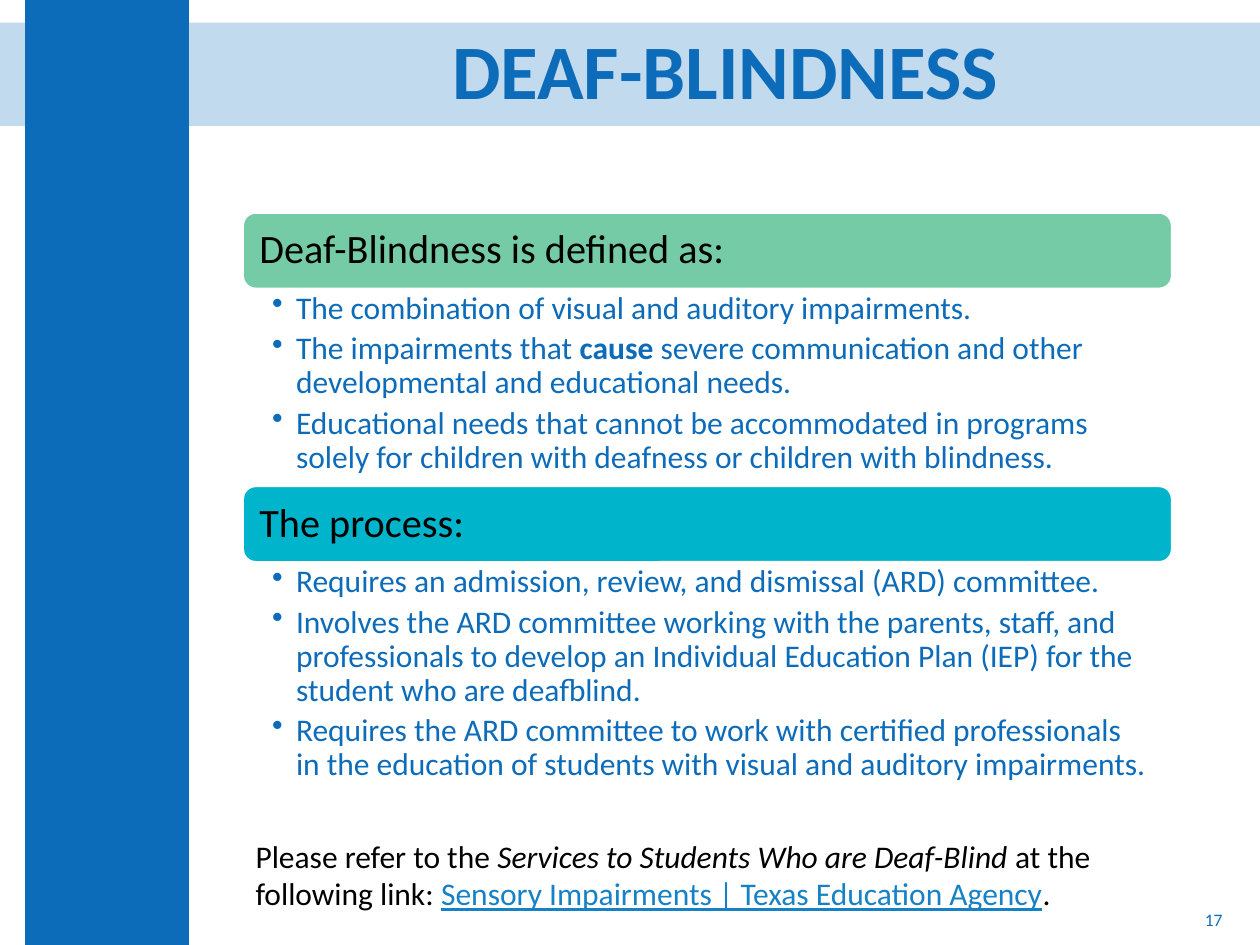
from lxml import etree
from pptx import Presentation
from pptx.dml.color import RGBColor
from pptx.enum.shapes import MSO_SHAPE as SHAPE
from pptx.enum.text import MSO_ANCHOR as ANCHOR, PP_ALIGN as ALIGN
from pptx.oxml.ns import qn
from pptx.util import Inches, Pt

BLUE, BLACK, WHITE = "0D6CB9", "000000", "FFFFFF"


def rgb(value):
    return RGBColor.from_string(value)


def add_text(s, box, paragraphs, size, color, anchor=ANCHOR.TOP,
             insets=(0.1, 0.05, 0.1, 0.05), bullet=False, **para_format):
    """Each paragraph is a list of (text, font values) runs."""
    tf = s.shapes.add_textbox(*map(Inches, box)).text_frame
    tf.word_wrap = True
    tf.vertical_anchor = anchor
    for side, inset in zip(("left", "top", "right", "bottom"), insets):
        setattr(tf, f"margin_{side}", Inches(inset))
    for i, runs in enumerate(paragraphs):
        p = tf.paragraphs[0] if i == 0 else tf.add_paragraph()
        for name, value in para_format.items():
            setattr(p, name, value)
        if bullet:
            pPr = p._p.get_or_add_pPr()
            pPr.set("marL", str(Inches(0.19)))
            pPr.set("indent", str(-Inches(0.19)))
            etree.SubElement(pPr, qn("a:buChar")).set("char", "•")
        for text, values in runs:
            r = p.add_run()
            r.text = text
            font = {"name": "Calibri", "size": Pt(size), "color": color, **values}
            r.font.color.rgb = rgb(font.pop("color"))
            for name, value in font.items():
                setattr(r.font, name, value)


prs = Presentation()
prs.slide_width, prs.slide_height = Inches(10), Inches(7.5)
s = prs.slides.add_slide(prs.slide_layouts[6])

# Pale header band and solid side band
for box, alpha in (((0, 0.18, 10, 0.82), 25), ((0.2, 0, 1.3, 7.5), 100)):
    sp = s.shapes.add_shape(SHAPE.RECTANGLE, *map(Inches, box))
    sp.shadow.inherit = False
    sp.fill.solid()
    sp.fill.fore_color.rgb = rgb(BLUE)
    sp.line.fill.background()
    if alpha < 100:
        clr = sp._element.spPr.find(qn("a:solidFill"))[0]
        etree.SubElement(clr, qn("a:alpha")).set("val", str(alpha * 1000))

# Title and slide number
add_text(s, (1.81, 0.18, 7.9, 0.82), [[("DEAF-BLINDNESS", {"bold": True})]],
         44, BLUE, ANCHOR.MIDDLE, alignment=ALIGN.CENTER, line_spacing=0.9)
add_text(s, (7.55, 7.1, 2.25, 0.4), [[("17", {})]], 10, BLUE, ANCHOR.MIDDLE,
         alignment=ALIGN.RIGHT, space_after=Pt(6))

# Sections: heading bar with a bullet list below
sections = [
    (1.69, 1.56, "75CBA6", "Deaf-Blindness is defined as:", [
        [("The combination of visual and auditory impairments.", {})],
        [("The impairments that ", {}), ("cause ", {"bold": True}),
         ("severe communication and other developmental and educational needs.", {})],
        [("Educational needs that cannot be accommodated in programs solely for "
          "children with deafness or children with blindness.", {})],
    ]),
    (3.86, 1.87, "00B5CB", "The process:", [
        [("Requires an admission, review, and dismissal (ARD) committee.", {})],
        [("Involves the ARD committee working with the parents, staff, and "
          "professionals to develop an Individual Education Plan (IEP) for the "
          "student who are deafblind.", {})],
        [("Requires the ARD committee to work with certified professionals in the "
          "education of students with visual and auditory impairments.", {})],
    ]),
]
left, width, bar_height, pad = 1.93, 7.37, 0.6, 0.03
for top, list_height, color, heading, bullets in sections:
    sp = s.shapes.add_shape(SHAPE.ROUNDED_RECTANGLE, Inches(left), Inches(top),
                            Inches(width), Inches(bar_height))
    sp.shadow.inherit = False
    sp.fill.solid()
    sp.fill.fore_color.rgb = rgb(color)
    sp.line.color.rgb = rgb(WHITE)
    sp.line.width = Pt(1)
    add_text(s, (left + pad, top + pad, width - 2 * pad, bar_height - 2 * pad),
             [[(heading, {})]], 23, BLACK, ANCHOR.MIDDLE, (0.1,) * 4, line_spacing=0.9)
    add_text(s, (left, top + bar_height, width, list_height), bullets, 18, BLUE,
             insets=(0.23, 0.03, 0.18, 0.03), bullet=True,
             line_spacing=0.9, space_after=Pt(3.6))

# Reference note
add_text(s, (left, 6.59, width, 0.71), [[
    ("Please refer to the ", {}),
    ("Services to Students Who are Deaf-Blind ", {"italic": True}),
    ("at the following link: ", {}),
    ("Sensory Impairments | Texas Education Agency",
     {"color": "1682C5", "underline": True}),
    (".", {}),
]], 18, BLACK)

prs.save("out.pptx")
